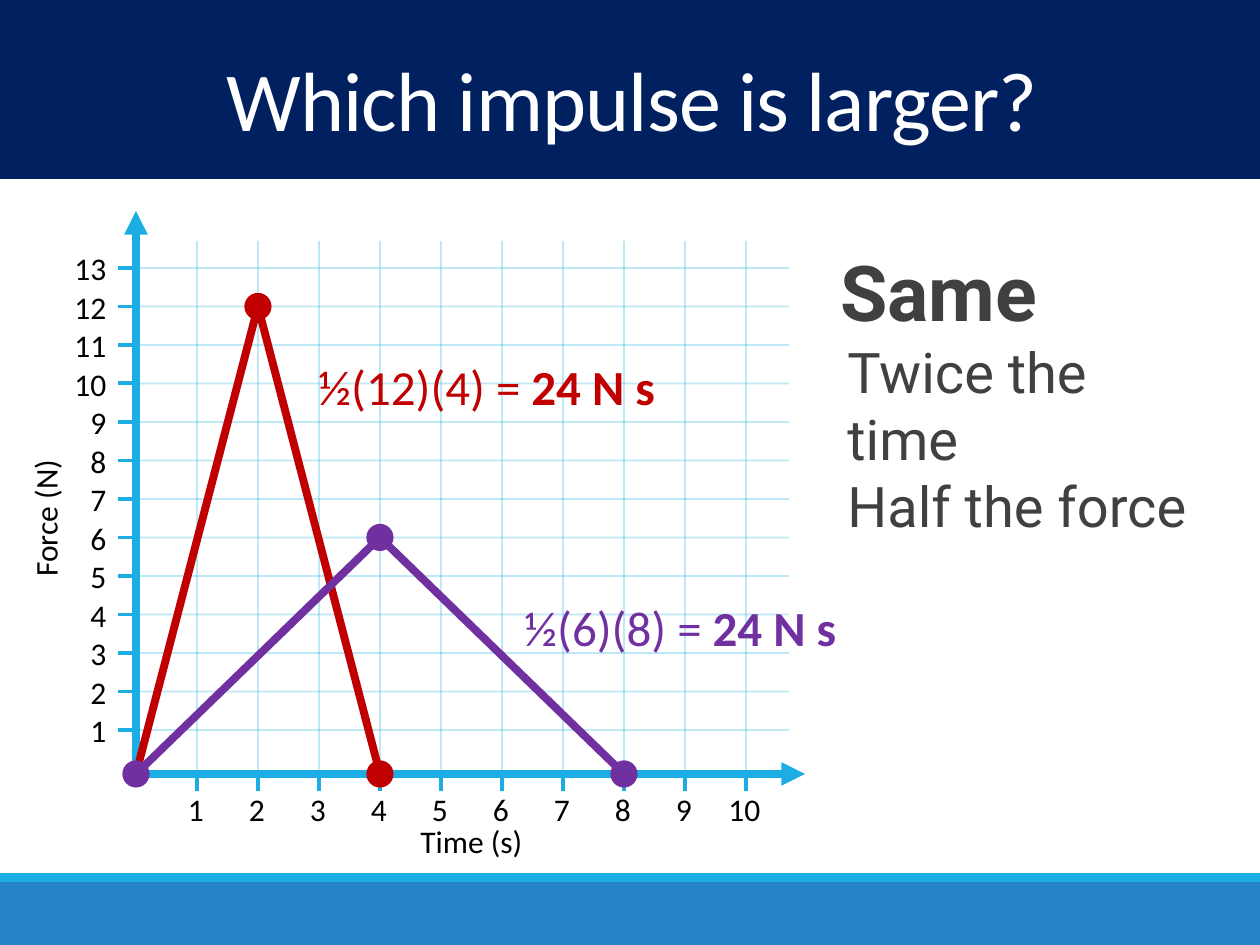
"""Build a slide comparing two impulses on a force-time graph."""
from dataclasses import dataclass

from lxml import etree
from pptx import Presentation
from pptx import util as u
from pptx.dml.color import RGBColor
from pptx.enum import shapes, text
from pptx.oxml import ns


@dataclass(frozen=True)
class Theme:
    navy: str = "002060"
    sky: str = "1CADE4"
    blue: str = "2683C6"
    white: str = "FFFFFF"
    black: str = "000000"
    gray: str = "404040"
    red: str = "C00000"
    purple: str = "7030A0"
    body_font: str = "Calibri"
    answer_font: str = "Roboto"
    title_size: int = 48
    answer_size: int = 44
    reason_size: int = 32
    formula_size: int = 28
    label_size: int = 18
    heavy: float = 4.5
    tick: float = 2.25
    hairline: float = 1
    outline: float = 1.25


THEME = Theme()
TITLE = "Which impulse is larger?"
ANSWER = "Same"
REASONS = ["Twice the time", "Half the force"]
AXIS_LABELS = [
    ("Force (N)", (-88, 431, 266, 50), 270),
    ("Time (s)", (408, 816, 266, 50), 0),
]
PULSES = [
    (THEME.red, [(0, 0), (2, 12), (4, 0)], [(2, 12), (4, 0)]),
    (THEME.purple, [(0, 0), (4, 6), (8, 0)], [(0, 0), (4, 6), (8, 0)]),
]
FORMULAS = [
    ("½(6)(8) = ", "24 N s", THEME.purple, (512, 591, 341, 72)),
    ("½(12)(4) = ", "24 N s", THEME.red, (306, 350, 367, 72)),
]
BANDS = [(THEME.blue, (0, 882, 1260, 63)), (THEME.sky, (0, 873, 1260, 9))]
TITLE_BAND = (0, 0, 1260, 179)

TIMES, FORCES = range(1, 11), range(1, 14)
ORIGIN_X, BASELINE = 136, 774
COLUMN, ROW = 61, 38.5
TOP_ROW = 268
GRID_TOP, GRID_RIGHT = 241, 789
DOT = 25


def px(value):
    return u.Emu(round(value * 914400 / 126))


def time_x(time):
    return ORIGIN_X + COLUMN * time


def force_y(force):
    return TOP_ROW + ROW * (FORCES[-1] - force) if force else BASELINE


def add_run(paragraph, words, size, color, font=THEME.body_font, bold=False):
    run = paragraph.add_run()
    run.text = words
    run.font.size = u.Pt(size)
    run.font.name = font
    run.font.bold = bold
    run.font.color.rgb = RGBColor.from_string(color)
    return run


def add_text(slide, box, paragraphs, wrap=False, rotation=0):
    shape = slide.shapes.add_textbox(*map(px, box))
    shape.rotation = rotation
    frame = shape.text_frame
    frame.word_wrap = wrap
    frame.auto_size = text.MSO_AUTO_SIZE.SHAPE_TO_FIT_TEXT
    for index, runs in enumerate(paragraphs):
        paragraph = frame.add_paragraph() if index else frame.paragraphs[0]
        for run in runs:
            add_run(paragraph, *run)


def add_line(parent, start, end, color, width, arrow=False, alpha=None):
    connector = parent.shapes.add_connector(
        shapes.MSO_CONNECTOR.STRAIGHT, *map(px, (*start, *end)))
    connector.line.color.rgb = RGBColor.from_string(color)
    connector.line.width = u.Pt(width)
    properties = connector.element.spPr
    outline = properties.find(ns.qn("a:ln"))
    if alpha:
        fill = outline.find(".//" + ns.qn("a:srgbClr"))
        etree.SubElement(fill, ns.qn("a:alpha"), val=str(alpha * 1000))
    if arrow:
        etree.SubElement(outline, ns.qn("a:tailEnd"), type="triangle")
    etree.SubElement(properties, ns.qn("a:effectLst"))


def add_shape(parent, kind, box, color, outline=0):
    shape = parent.shapes.add_shape(kind, *map(px, box))
    shape.shadow.inherit = False
    shape.fill.solid()
    shape.fill.fore_color.rgb = RGBColor.from_string(color)
    if outline:
        shape.line.color.rgb = RGBColor.from_string(color)
        shape.line.width = u.Pt(outline)
    else:
        shape.line.fill.background()
    return shape


def add_title(slide):
    title = slide.shapes.title
    for color, box in BANDS + [(THEME.navy, TITLE_BAND)]:
        band = add_shape(slide, shapes.MSO_SHAPE.RECTANGLE, box, color)
        title.element.addprevious(band.element)
    title.left, title.top, title.width, title.height = map(px, (4, 53, 1256, 106))
    frame = title.text_frame
    frame.auto_size = text.MSO_AUTO_SIZE.NONE
    frame.vertical_anchor = text.MSO_ANCHOR.MIDDLE
    paragraph = frame.paragraphs[0]
    paragraph.alignment = text.PP_ALIGN.CENTER
    paragraph.line_spacing = 0.85
    run = add_run(paragraph, TITLE, THEME.title_size, THEME.white)
    run.font._element.set("spc", "-50")


def add_label(slide, words, box, wrap=False, rotation=0):
    runs = [(words, THEME.label_size, THEME.black)]
    add_text(slide, box, [runs], wrap, rotation)


def add_graph(slide):
    add_line(slide, (132, BASELINE), (805, BASELINE), THEME.sky, THEME.heavy, arrow=True)
    for force in FORCES:
        y = force_y(force)
        width = 42 if force < 10 else 58
        add_line(slide, (135, y), (118, y), THEME.sky, THEME.tick)
        add_line(slide, (134, y), (GRID_RIGHT, y), THEME.sky, THEME.hairline, alpha=27)
        add_label(slide, str(force), (120 - width, y - 25, width, 50))
    for time in TIMES:
        x = time_x(time)
        width = 43 if time < 10 else 60
        add_line(slide, (x, 791), (x, 775), THEME.sky, THEME.tick)
        add_line(slide, (x, GRID_TOP), (x, BASELINE), THEME.sky, THEME.hairline, alpha=27)
        add_label(slide, str(time), (x - width / 2, 784, width, 50))
    add_line(slide, (ORIGIN_X, 775), (ORIGIN_X, 211), THEME.sky, THEME.heavy, arrow=True)
    for words, box, rotation in AXIS_LABELS:
        add_label(slide, words, box, True, rotation)


def add_pulse(slide, color, corners, dots):
    group = slide.shapes.add_group_shape()
    points = [(time_x(time), force_y(force)) for time, force in corners]
    for start, end in zip(points, points[1:]):
        add_line(group, start, end, color, THEME.heavy)
    for time, force in dots:
        box = (time_x(time) - DOT / 2, force_y(force) - DOT / 2, DOT, DOT)
        add_shape(group, shapes.MSO_SHAPE.OVAL, box, color, THEME.outline)


def main():
    presentation = Presentation()
    presentation.slide_width, presentation.slide_height = px(1260), px(945)
    slide = presentation.slides.add_slide(presentation.slide_layouts[5])
    add_title(slide)
    add_graph(slide)
    for pulse in PULSES:
        add_pulse(slide, *pulse)
    for product, result, color, box in FORMULAS:
        add_text(slide, box, [[
            (product, THEME.formula_size, color),
            (result, THEME.formula_size, color, THEME.body_font, True)]])
    add_text(slide, (828, 238, 224, 106), [[
        (ANSWER, THEME.answer_size, THEME.gray, THEME.answer_font, True)]])
    add_text(slide, (835, 331, 388, 149), [
        [(reason, THEME.reason_size, THEME.gray, THEME.answer_font)]
        for reason in REASONS], wrap=True)
    presentation.save("out.pptx")


if __name__ == "__main__":
    main()
